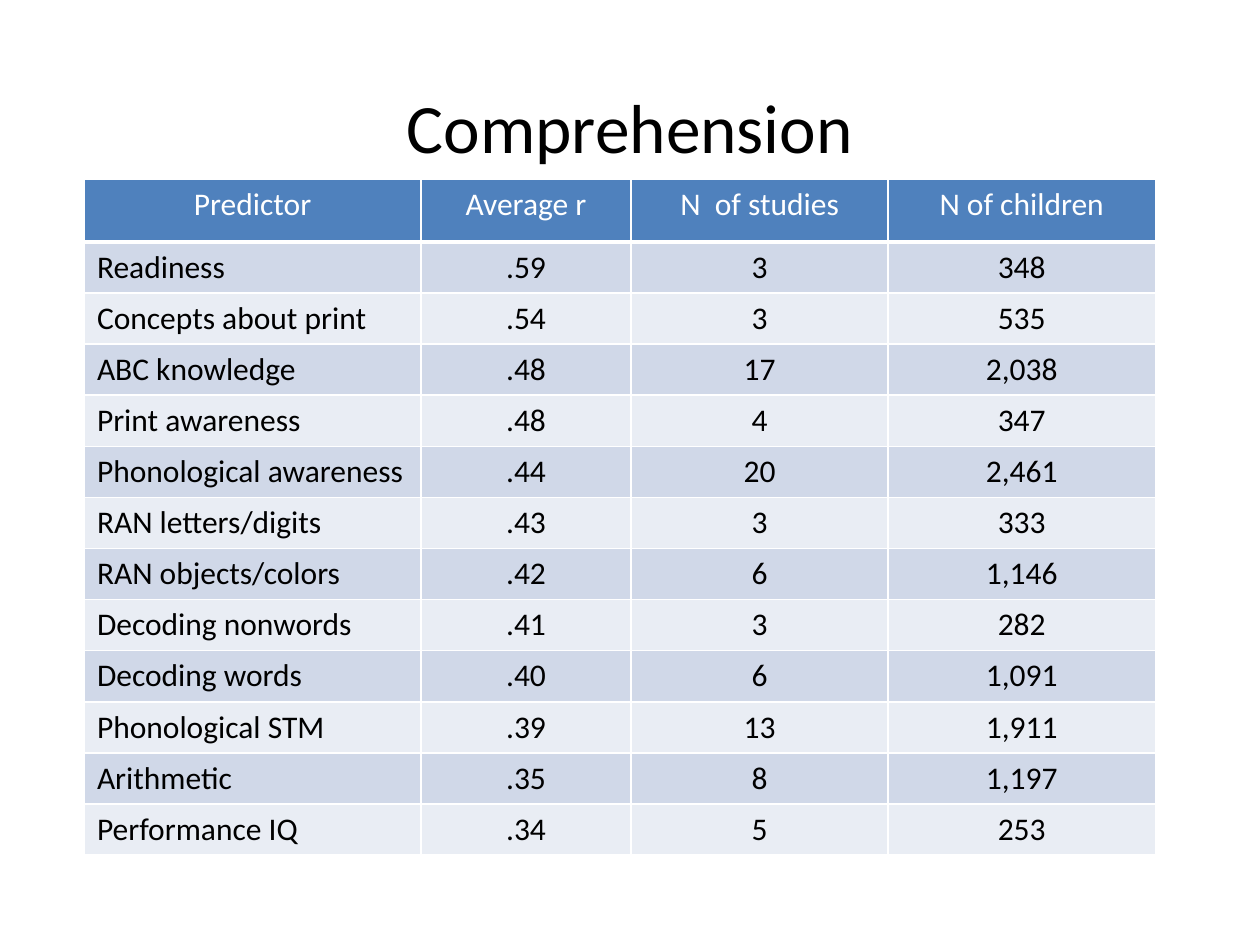
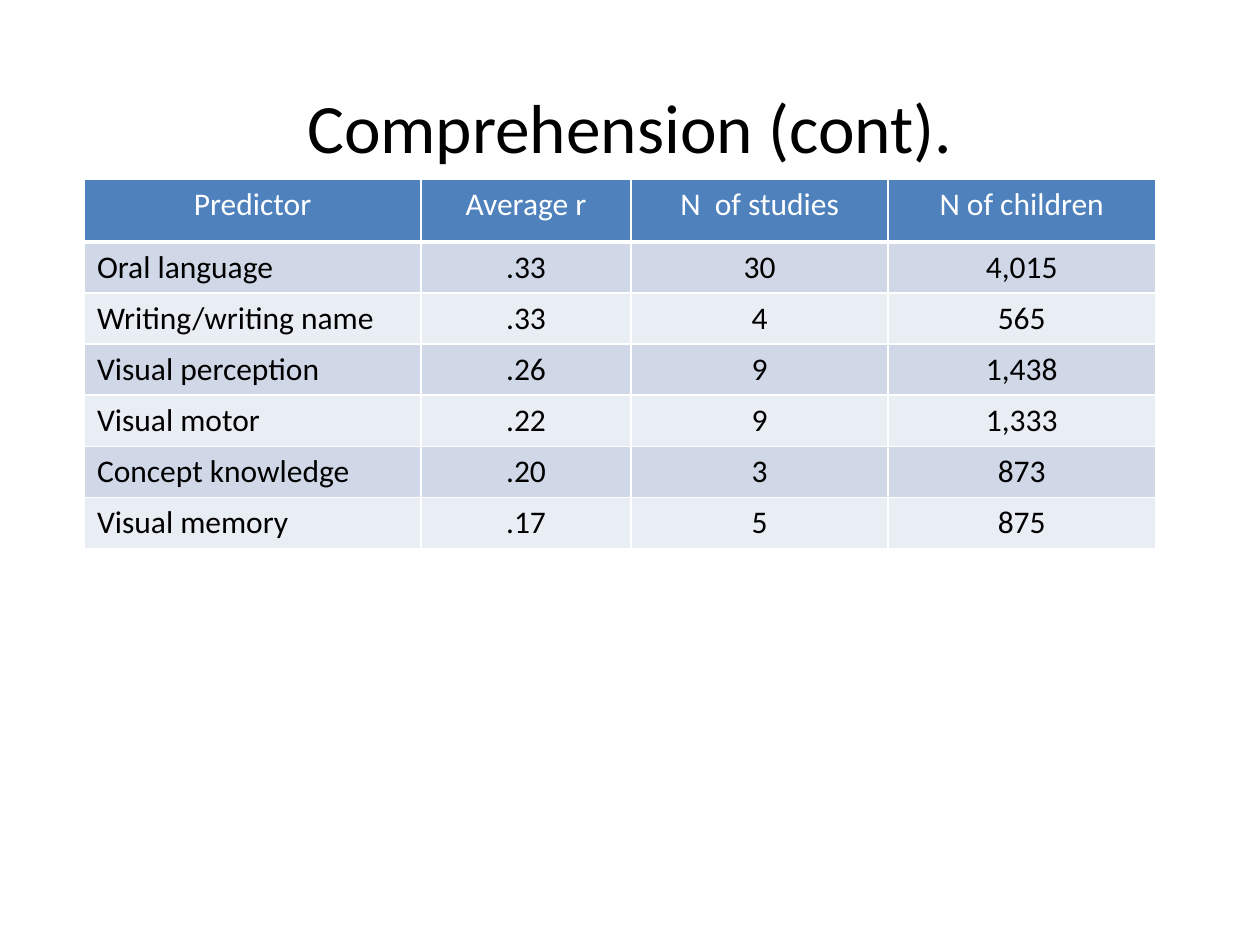
import pptx
import pptx.util
import pptx.dml.color
import pptx.enum.text
import pptx.oxml
import pptx.oxml.ns
from pptx.util import Inches

COLORS = {
    "text": "000000",
    "header_text": "FFFFFF",
    "header": "4F81BD",
    "odd": "D0D8E8",
    "even": "E9EDF4",
    "border": "FFFFFF",
}
FONT = "Calibri"
HEADINGS = ("Predictor", "Average r", "N  of studies", "N of children")
COLUMN_WIDTHS = (2.67, 1.67, 2.04, 2.12)
HEADER_HEIGHT = Inches(0.5)
ROW_HEIGHT = Inches(4.87) // 12

SLIDES = {
    "Comprehension": [
        ("Readiness", ".59", "3", "348"),
        ("Concepts about print", ".54", "3", "535"),
        ("ABC knowledge", ".48", "17", "2,038"),
        ("Print awareness", ".48", "4", "347"),
        ("Phonological awareness", ".44", "20", "2,461"),
        ("RAN letters/digits", ".43", "3", "333"),
        ("RAN objects/colors", ".42", "6", "1,146"),
        ("Decoding nonwords", ".41", "3", "282"),
        ("Decoding words", ".40", "6", "1,091"),
        ("Phonological STM", ".39", "13", "1,911"),
        ("Arithmetic", ".35", "8", "1,197"),
        ("Performance IQ", ".34", "5", "253"),
    ],
    "Comprehension (cont).": [
        ("Oral language", ".33", "30", "4,015"),
        ("Writing/writing name", ".33", "4", "565"),
        ("Visual perception", ".26", "9", "1,438"),
        ("Visual motor", ".22", "9", "1,333"),
        ("Concept knowledge", ".20", "3", "873"),
        ("Visual memory", ".17", "5", "875"),
    ],
}


def write_text(tf, text, size=18, color="text", align="CENTER"):
    p = tf.paragraphs[0]
    p.alignment = getattr(pptx.enum.text.PP_ALIGN, align)
    r = p.add_run()
    r.text = text
    r.font.name = FONT
    r.font.size = pptx.util.Pt(size)
    r.font.bold = False
    r.font.color.rgb = pptx.dml.color.RGBColor.from_string(COLORS[color])


def style_cell(cell, fill, bottom=1):
    tcPr = cell._tc.get_or_add_tcPr()
    for side, width in (("L", 1), ("R", 1), ("T", 1), ("B", bottom)):
        tcPr.append(pptx.oxml.parse_xml(
            f'<a:ln{side} {pptx.oxml.ns.nsdecls("a")} w="{pptx.util.Pt(width)}">'
            f'<a:solidFill><a:srgbClr val="{COLORS["border"]}"/></a:solidFill>'
            f'</a:ln{side}>'))
    cell.fill.solid()
    cell.fill.fore_color.rgb = pptx.dml.color.RGBColor.from_string(COLORS[fill])


prs = pptx.Presentation()
prs.slide_width = Inches(10)
prs.slide_height = Inches(7.5)

for title, predictors in SLIDES.items():
    s = prs.slides.add_slide(prs.slide_layouts[6])

    tf = s.shapes.add_textbox(Inches(0.75), Inches(0.67), Inches(8.5), Inches(0.58)).text_frame
    tf.word_wrap = True
    tf.margin_top = tf.margin_bottom = 0
    write_text(tf, title, size=39.6)

    rows = [HEADINGS] + predictors
    height = HEADER_HEIGHT + ROW_HEIGHT * len(predictors)
    table = s.shapes.add_table(len(rows), len(HEADINGS), Inches(0.67), Inches(1.42),
                               Inches(8.5), height).table
    for column, width in zip(table.columns, COLUMN_WIDTHS):
        column.width = Inches(width)

    for i, values in enumerate(rows):
        is_header = i == 0
        table.rows[i].height = HEADER_HEIGHT if is_header else ROW_HEIGHT
        fill = "header" if is_header else "odd" if i % 2 else "even"
        for j, value in enumerate(values):
            cell = table.cell(i, j)
            style_cell(cell, fill, bottom=3 if is_header else 1)
            write_text(cell.text_frame, value,
                       color="header_text" if is_header else "text",
                       align="CENTER" if is_header or j else "LEFT")

prs.save("out.pptx")
